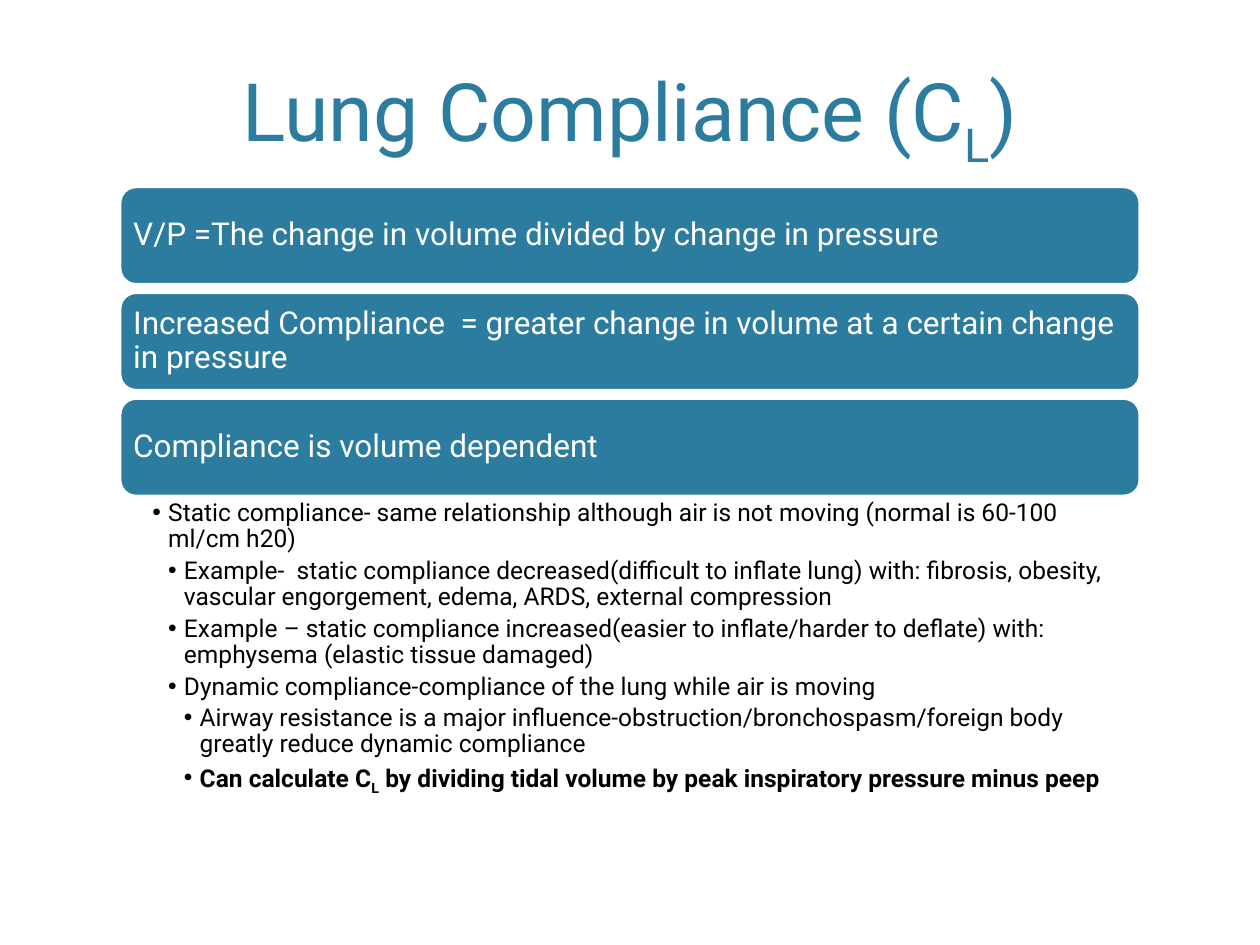
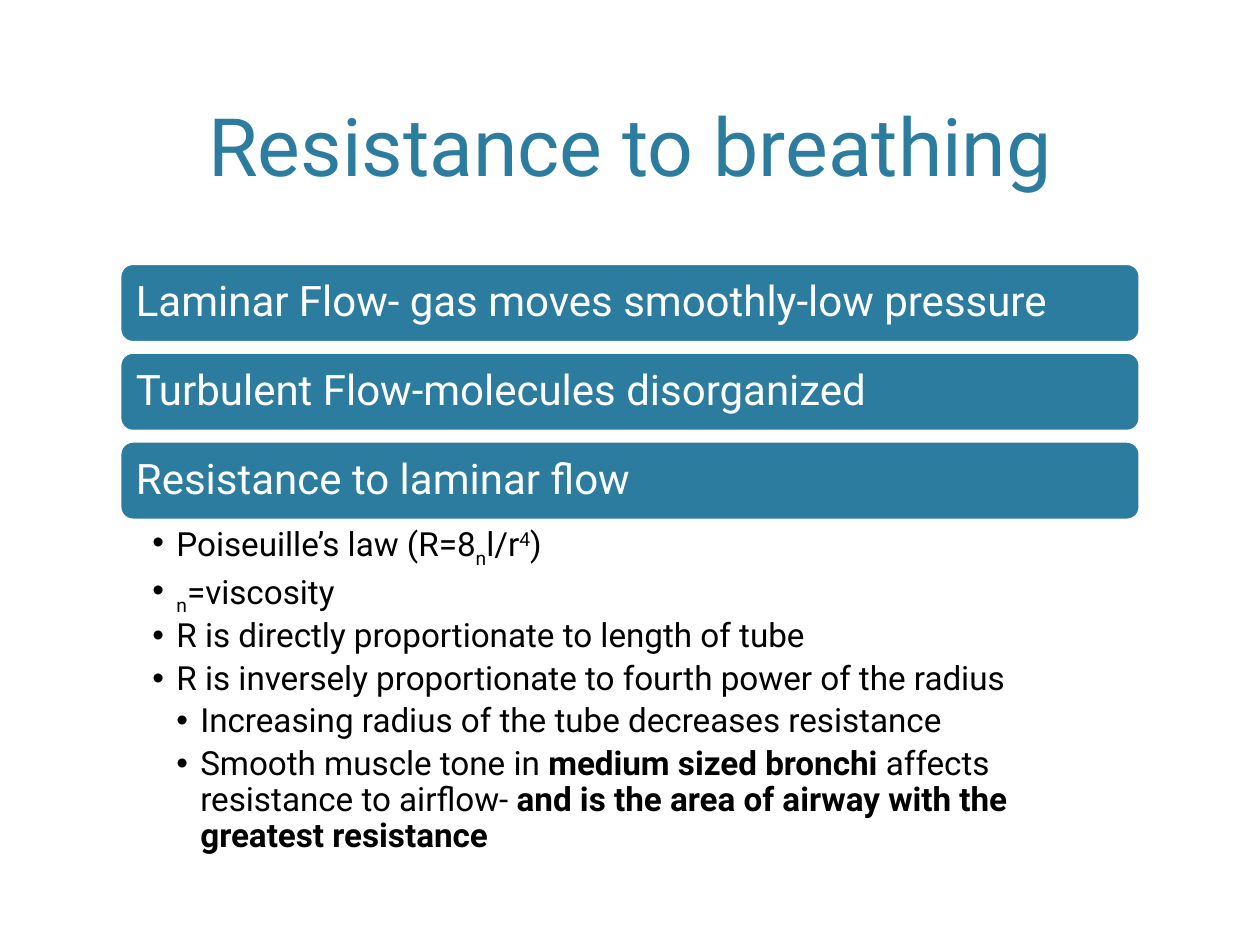
from pptx import Presentation
from pptx import util as u
from pptx.dml.color import RGBColor
from pptx.enum import shapes, text
from pptx.oxml.ns import qn
from lxml import etree

CELL = u.Inches(0.1)
COLS, ROWS = 100, 75
LEFT, WIDE = 9.5, 81
FONT = "Roboto"
BLUE, WHITE, BLACK = "2C7C9F", "FFFFFF", "000000"
SUB, SUP = -25, 30

COMPLY = dict(
    title=[("Lung Compliance (C", ""), ("L", SUB), (")", "")],
    head=(5, 3.7, 90, 10.4),
    bars=["V/P =The change in volume divided by change in pressure",
          "Increased Compliance  = greater change in volume at a certain change in pressure",
          "Compliance is volume dependent"],
    top=14.8, high=7.8, pitch=8.4, size=18, pad=0.7,
    notes=[
        (1, [("Static compliance- same relationship although air is not moving "
              "(normal is 60-100 ml/cm h20)", "")]),
        (2, [("Example-  static compliance decreased(difficult to inflate lung) with: "
              "fibrosis, obesity, vascular engorgement, edema, ARDS, external compression", "")]),
        (2, [("Example – static compliance increased(easier to inflate/harder to deflate) "
              "with: emphysema (elastic tissue damaged)", "")]),
        (2, [("Dynamic compliance-compliance of the lung while air is moving", "")]),
        (3, [("Airway resistance is a major influence-obstruction/bronchospasm/foreign body "
              "greatly reduce dynamic compliance", "")]),
        (3, [("Can calculate C", "b"), ("L", ("b", SUB)),
             (" by dividing tidal volume by peak inspiratory pressure minus peep", "b")])],
    tall=26.9, small=14, step=1.25, right=1.4)

RESIST = dict(
    title=[("Resistance to breathing", "")],
    head=(6, 1.2, 88, 14.6),
    bars=["Laminar Flow- gas moves smoothly-low pressure",
          "Turbulent Flow-molecules disorganized",
          "Resistance to laminar flow"],
    top=20.9, high=6.3, pitch=7.05, size=24, pad=1,
    notes=[
        (1, [("Poiseuille’s law (R=8", ""), ("n", SUB), ("l/r", ""), ("4", SUP), (")", "")]),
        (1, [("n", SUB), ("=viscosity", "")]),
        (1, [("R is directly proportionate to length of tube", "")]),
        (1, [("R is inversely proportionate to fourth power of the radius", "")]),
        (2, [("Increasing radius of the tube decreases resistance", "")]),
        (2, [("Smooth muscle tone in ", ""), ("medium sized bronchi ", "b"),
             ("affects resistance to airflow- ", ""),
             ("and is the area of airway with the greatest resistance", "b")])],
    tall=27.2, small=19, step=1.9, right=1.9)


def grid(n):
    """Turn grid cells into a length."""
    return u.Emu(round(n * CELL))


def tint(hue):
    """Turn a hex string into a colour."""
    return RGBColor.from_string(hue)


def place(shape, left, top, wide, high):
    """Put a shape on the grid."""
    shape.left, shape.top = grid(left), grid(top)
    shape.width, shape.height = grid(wide), grid(high)


def frame(shape, pads, anchor):
    """Set the margins and anchor of a text frame and return it."""
    tf = shape.text_frame
    tf.word_wrap = True
    tf.auto_size = text.MSO_AUTO_SIZE.NONE
    tf.vertical_anchor = anchor
    tf.margin_left, tf.margin_top, tf.margin_right, tf.margin_bottom = map(grid, pads)
    return tf


def write(para, parts, size, hue):
    """Fill a paragraph with runs, some bold, raised or lowered."""
    para.text = parts[0][0]
    for words, _ in parts[1:]:
        para.add_run().text = words
    for run, (_, mark) in zip(para.runs, parts):
        marks = mark if isinstance(mark, tuple) else (mark,)
        font = run.font
        font.name, font.size = FONT, u.Pt(size)
        font.color.rgb = tint(hue)
        font.bold = "b" in marks
        for shift in (SUB, SUP):
            if shift in marks:
                run._r.get_or_add_rPr().set("baseline", str(shift * 1000))


def space(para, after):
    """Set tight lines and the gap after a paragraph."""
    para.line_spacing = 0.9
    para.space_before = u.Pt(0)
    para.space_after = u.Pt(after)


def bullet(para, level, step):
    """Give a paragraph a hanging dot at its level."""
    para.level = level
    props = para._p.get_or_add_pPr()
    props.set("marL", str(grid(step * level)))
    props.set("indent", str(-grid(step)))
    etree.SubElement(props, qn("a:buFont")).set("typeface", "Arial")
    etree.SubElement(props, qn("a:buChar")).set("char", "•")


def heading(shape, parts, box):
    """Lay out the slide title."""
    place(shape, *box)
    tf = frame(shape, (1, 0.5, 1, 0.5), text.MSO_ANCHOR.BOTTOM)
    para = tf.paragraphs[0]
    write(para, parts, 46, BLUE)
    para.alignment = text.PP_ALIGN.CENTER


def bar(slide, words, box, size, pad):
    """Draw one rounded bar with its statement."""
    shape = slide.shapes.add_shape(shapes.MSO_SHAPE.ROUNDED_RECTANGLE, 0, 0, 0, 0)
    place(shape, *box)
    shape.shadow.inherit = False
    shape.fill.solid()
    shape.fill.fore_color.rgb = tint(BLUE)
    shape.line.color.rgb = tint(WHITE)
    shape.line.width = u.Pt(2)
    para = frame(shape, [pad] * 4, text.MSO_ANCHOR.MIDDLE).paragraphs[0]
    write(para, [(words, "")], size, WHITE)
    para.alignment = text.PP_ALIGN.LEFT
    space(para, 0)


def listing(shape, notes, box, size, step, right):
    """Lay out the bulleted notes under the bars."""
    place(shape, *box)
    tf = frame(shape, (2.6, 0.3, right, 0.3), text.MSO_ANCHOR.TOP)
    for n, (level, parts) in enumerate(notes):
        para = tf.add_paragraph() if n else tf.paragraphs[0]
        write(para, parts, size, BLACK)
        space(para, size * 0.2)
        bullet(para, level, step)


def page(deck, d):
    """Build a slide of title, stacked bars and notes."""
    slide = deck.slides.add_slide(deck.slide_layouts[1])
    slide.background.fill.solid()
    slide.background.fill.fore_color.rgb = tint(WHITE)
    title, body = slide.placeholders
    heading(title, d["title"], d["head"])
    for n, words in enumerate(d["bars"]):
        box = LEFT, d["top"] + n * d["pitch"], WIDE, d["high"]
        bar(slide, words, box, d["size"], d["pad"])
    end = box[1] + d["high"]
    listing(body, d["notes"], (LEFT, end, WIDE, d["tall"]),
            d["small"], d["step"], d["right"])


def main():
    """Build and save the deck."""
    deck = Presentation()
    deck.slide_width, deck.slide_height = grid(COLS), grid(ROWS)
    for data in (COMPLY, RESIST):
        page(deck, data)
    deck.save("out.pptx")


if __name__ == "__main__":
    main()
